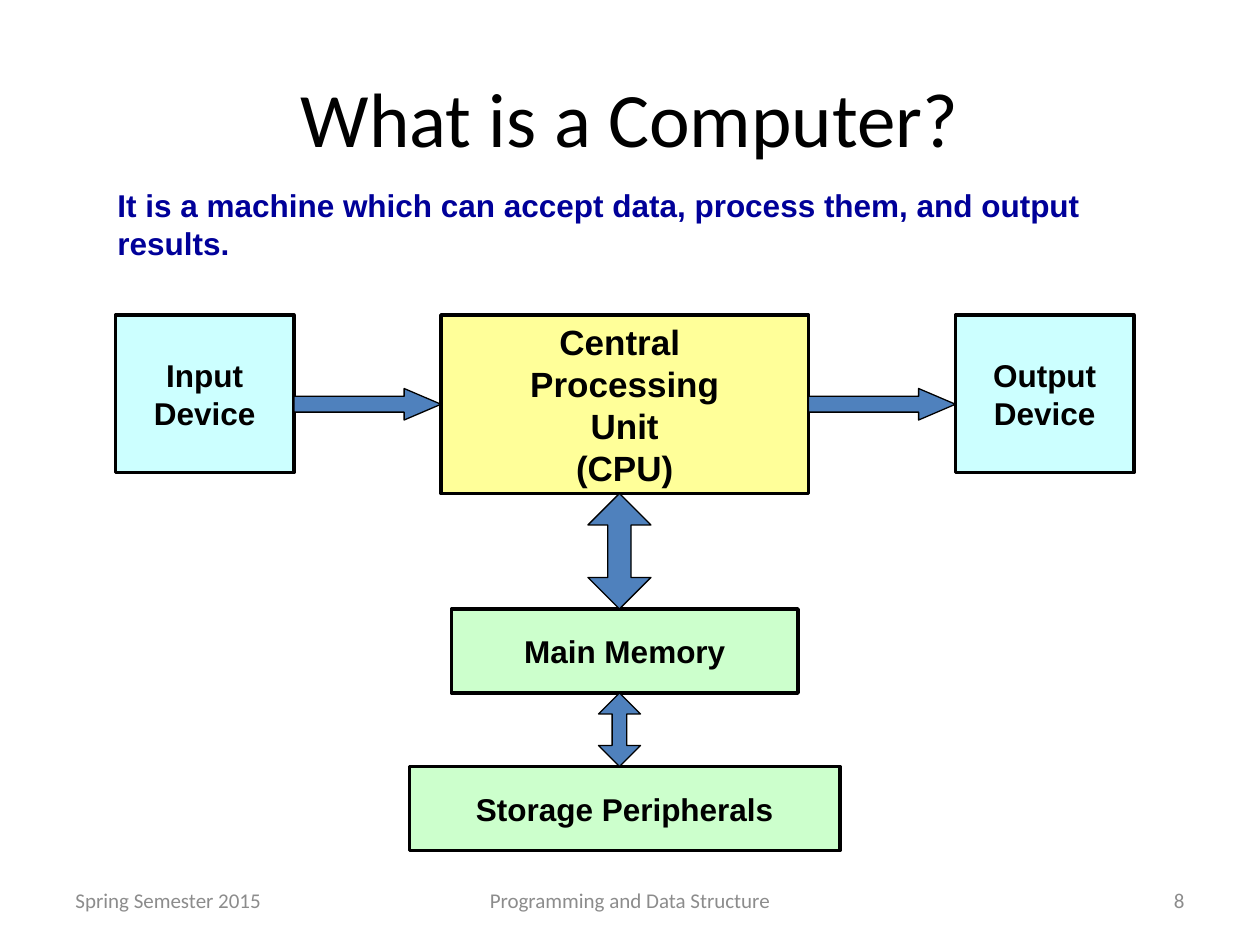
from dataclasses import dataclass

import pptx
import pptx.dml.color
import pptx.enum.shapes
import pptx.enum.text
import pptx.util

EMU_PER_PX = 9525
COLORS = {
    "black": "000000",
    "footer": "8C8C8C",
    "definition": "000099",
    "processor": "FFFF99",
    "device": "CCFFFF",
    "storage": "CCFFCC",
    "arrow": "4F81BD",
}
ALIGN = pptx.enum.text.PP_ALIGN
ANCHOR = pptx.enum.text.MSO_ANCHOR
SHAPE = pptx.enum.shapes.MSO_SHAPE


@dataclass(frozen=True)
class Area:
    left: int
    top: int
    width: int
    height: int

    @property
    def right(self) -> int:
        return self.left + self.width

    @property
    def bottom(self) -> int:
        return self.top + self.height

    def emu(self) -> list[int]:
        return [px(v) for v in (self.left, self.top, self.width, self.height)]


@dataclass(frozen=True)
class TextStyle:
    size: int
    font: str
    color: str
    bold: bool = False
    align: ALIGN = ALIGN.CENTER
    anchor: ANCHOR = ANCHOR.MIDDLE
    wrap: bool = True


@dataclass(frozen=True)
class Unit:
    area: Area
    lines: tuple[str, ...]
    fill: str
    size: int = 18


@dataclass(frozen=True)
class Label:
    area: Area
    text: str
    style: TextStyle


def px(length: int) -> int:
    return length * EMU_PER_PX


def rgb(name: str) -> pptx.dml.color.RGBColor:
    return pptx.dml.color.RGBColor.from_string(COLORS[name])


def write(frame, lines: tuple[str, ...], style: TextStyle) -> None:
    frame.word_wrap = style.wrap
    frame.vertical_anchor = style.anchor
    frame.text = "\n".join(lines)
    for paragraph in frame.paragraphs:
        paragraph.alignment = style.align
        paragraph.font.size = pptx.util.Pt(style.size)
        paragraph.font.name = style.font
        paragraph.font.bold = style.bold
        paragraph.font.color.rgb = rgb(style.color)


def draw_label(slide, label: Label) -> None:
    box = slide.shapes.add_textbox(*label.area.emu())
    write(box.text_frame, (label.text,), label.style)


def draw_shape(slide, kind: SHAPE, area: Area, fill: str, line_width: float):
    shape = slide.shapes.add_shape(kind, *area.emu())
    shape.shadow.inherit = False
    shape.fill.solid()
    shape.fill.fore_color.rgb = rgb(fill)
    shape.line.color.rgb = rgb("black")
    shape.line.width = pptx.util.Pt(line_width)
    return shape


def draw_unit(slide, unit: Unit) -> None:
    shape = draw_shape(slide, SHAPE.RECTANGLE, unit.area, unit.fill, 2)
    style = TextStyle(unit.size, "Arial", "black", bold=True, wrap=False)
    write(shape.text_frame, unit.lines, style)


def draw_arrow(slide, kind: SHAPE, area: Area, head: float) -> None:
    arrow = draw_shape(slide, kind, area, "arrow", 0.75)
    arrow.adjustments[0] = 0.5
    arrow.adjustments[1] = head


def draw_flow(slide, source: Area, target: Area) -> None:
    area = Area(source.right, 296, target.left - source.right, 24)
    draw_arrow(slide, SHAPE.RIGHT_ARROW, area, 1.17)


def draw_exchange(slide, upper: Area, lower: Area, width: int, head: float) -> None:
    area = Area(472 - width // 2, upper.bottom, width, lower.top - upper.bottom)
    draw_arrow(slide, SHAPE.UP_DOWN_ARROW, area, head)


def footer(left: int, width: int, text: str, align: ALIGN) -> Label:
    style = TextStyle(12, "Calibri", "footer", align=align)
    return Label(Area(left, 667, width, 38), text, style)


def main() -> None:
    presentation = pptx.Presentation()
    presentation.slide_width = px(960)
    presentation.slide_height = px(720)
    slide = presentation.slides.add_slide(presentation.slide_layouts[6])

    cpu = Area(336, 240, 280, 136)
    input_device = Area(88, 240, 136, 120)
    output_device = Area(728, 240, 136, 120)
    memory = Area(344, 464, 264, 64)
    peripherals = Area(312, 584, 328, 64)

    title_style = TextStyle(44, "Calibri", "black")
    definition_style = TextStyle(
        18, "Arial", "definition", bold=True, align=ALIGN.LEFT, anchor=ANCHOR.TOP
    )
    labels = [
        Label(Area(48, 29, 864, 120), "What is a Computer?", title_style),
        Label(
            Area(80, 137, 824, 86),
            "It is a machine which can accept data, process them, and output results.",
            definition_style,
        ),
        footer(48, 224, "Spring Semester 2015", ALIGN.LEFT),
        footer(328, 304, "Programming and Data Structure", ALIGN.CENTER),
        footer(688, 224, "8", ALIGN.RIGHT),
    ]
    units = [
        Unit(cpu, ("Central ", "Processing", "Unit", "(CPU)"), "processor", 20),
        Unit(input_device, ("Input", "Device"), "device"),
        Unit(output_device, ("Output", "Device"), "device"),
        Unit(memory, ("Main Memory",), "storage"),
        Unit(peripherals, ("Storage Peripherals",), "storage"),
    ]
    for label in labels:
        draw_label(slide, label)
    for unit in units:
        draw_unit(slide, unit)
    draw_flow(slide, input_device, cpu)
    draw_flow(slide, cpu, output_device)
    draw_exchange(slide, cpu, memory, 48, 0.37)
    draw_exchange(slide, memory, peripherals, 32, 0.35)

    presentation.save("out.pptx")


if __name__ == "__main__":
    main()
